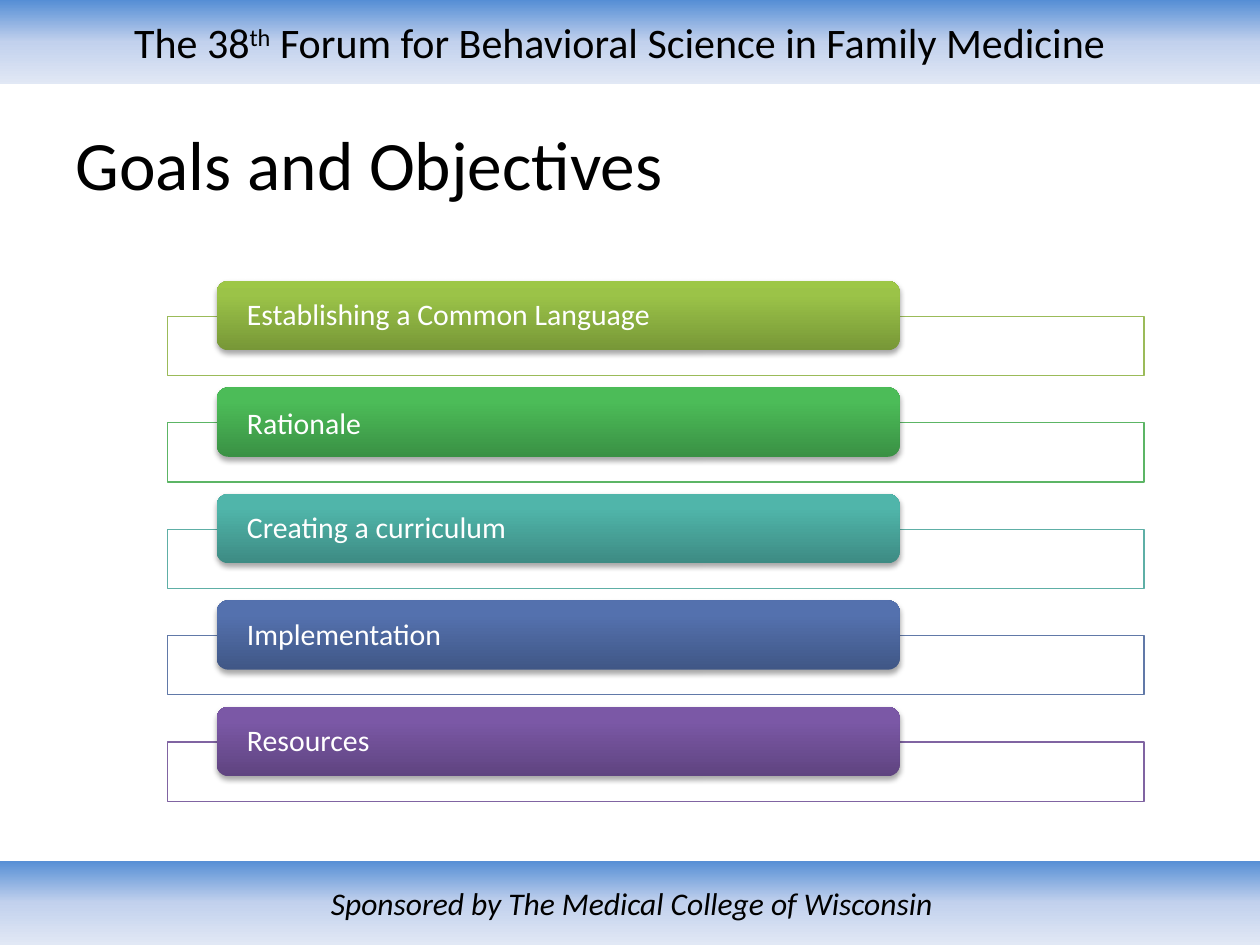
from lxml import etree
from pptx import Presentation
from pptx.dml.color import RGBColor
from pptx.enum.shapes import MSO_SHAPE
from pptx.enum.text import MSO_ANCHOR, MSO_AUTO_SIZE, PP_ALIGN
from pptx.oxml.ns import qn
from pptx.util import Inches, Pt

TITLE = "Goals and Objectives"
BAND_STOPS = [(0, "558ED5"), (50, "C2D1ED"), (100, "E1E8F5")]
BANDS = [
    {"top": 0, "width": 10, "right": 0.26, "size": 24, "italic": False,
     "spans": [("The 38", 0), ("th", 30), (" Forum for Behavioral Science in Family Medicine", 0)]},
    {"top": 6.83, "width": 10.03, "right": 0.1, "size": 18, "italic": True,
     "spans": [("Sponsored by The Medical College of Wisconsin", 0)]},
]
GOALS = [
    ("Establishing a Common Language", 0.9, "9BBB59", ("779737", "9BC348", "9DC746")),
    ("Rationale", 1.0, "5CB565", ("3A9144", "4CBC58", "4ABF57")),
    ("Creating a curriculum", 0.9, "5EAFA6", ("3D8B83", "50B5AA", "4EB8AC")),
    ("Implementation", 0.9, "6179A8", ("405786", "5471AE", "5271B0")),
    ("Resources", 0.9, "8064A2", ("5F4480", "7B58A6", "7C57A8")),
]
FIRST_TOP, LAST_TOP = 2.23, 5.61
PITCH = (LAST_TOP - FIRST_TOP) / (len(GOALS) - 1)


def color(value):
    return RGBColor.from_string(value)


def apply(target, values):
    for name, value in values.items():
        setattr(target, name, value)


def add_element(parent, tag, **attributes):
    return etree.SubElement(parent, qn(tag), {name: str(value) for name, value in attributes.items()})


def write(para, text, size, ink="000000", italic=False, raised=0):
    span = para.add_run()
    span.text = text
    apply(span.font, {"name": "Calibri", "size": Pt(size), "italic": italic})
    span.font.color.rgb = color(ink)
    if raised:
        span._r.get_or_add_rPr().set("baseline", str(raised * 1000))


def add_box(page, kind, left, top, width, height):
    box = page.shapes.add_shape(kind, *map(Inches, (left, top, width, height)))
    box.shadow.inherit = False
    box.line.fill.background()
    return box


def fill_gradient(box, stops, angle):
    box.fill.gradient()
    box.fill.gradient_angle = angle
    stop_list = box._element.spPr.find(".//" + qn("a:gsLst"))
    for stop in list(stop_list):
        stop_list.remove(stop)
    for position, value in stops:
        stop = add_element(stop_list, "a:gs", pos=position * 1000)
        add_element(stop, "a:srgbClr", val=value)


def add_shadow(box):
    effects = box._element.spPr.find(qn("a:effectLst"))
    shadow = add_element(effects, "a:outerShdw", blurRad=Pt(3.1), dist=Pt(1.8),
                         dir=90 * 60000, rotWithShape=0)
    shade = add_element(shadow, "a:srgbClr", val="000000")
    add_element(shade, "a:alpha", val=35000)


def add_band(page, band):
    box = add_box(page, MSO_SHAPE.RECTANGLE, 0, band["top"], band["width"], 0.67)
    fill_gradient(box, BAND_STOPS, 270)
    apply(box.text_frame, {"word_wrap": True, "vertical_anchor": MSO_ANCHOR.MIDDLE,
                           "margin_right": Inches(band["right"])})
    para = box.text_frame.paragraphs[0]
    para.alignment = PP_ALIGN.CENTER
    for text, raised in band["spans"]:
        write(para, text, band["size"], italic=band["italic"], raised=raised)


def add_goal(page, top, text, spacing, outline, shades):
    frame = add_box(page, MSO_SHAPE.RECTANGLE, 1.33, top + 0.28, 7.75, 0.47)
    frame.fill.solid()
    frame.fill.fore_color.rgb = color("FFFFFF")
    add_element(frame._element.spPr.find(".//" + qn("a:srgbClr")), "a:alpha", val=90000)
    frame.line.color.rgb = color(outline)
    frame.line.width = Pt(0.75)

    bar = add_box(page, MSO_SHAPE.ROUNDED_RECTANGLE, 1.72, top, 5.42, 0.55)
    fill_gradient(bar, zip((0, 80, 100), shades), 90)
    add_shadow(bar)

    label = page.shapes.add_textbox(*map(Inches, (1.75, top + 0.03, 5.37, 0.5)))
    apply(label.text_frame, {"word_wrap": True, "vertical_anchor": MSO_ANCHOR.MIDDLE,
                             "margin_left": Inches(0.21), "margin_right": Inches(0.21),
                             "margin_top": 0, "margin_bottom": 0})
    para = label.text_frame.paragraphs[0]
    para.line_spacing = spacing
    write(para, text, 17, "FFFFFF")


def main():
    deck = Presentation()
    apply(deck, {"slide_width": Inches(10), "slide_height": Inches(7.5)})
    page = deck.slides.add_slide(deck.slide_layouts[5])
    for band in BANDS:
        add_band(page, band)

    title = page.shapes.title
    apply(title, {"left": Inches(0.5), "top": Inches(0.92),
                  "width": Inches(9), "height": Inches(0.75)})
    apply(title.text_frame, {"word_wrap": True, "auto_size": MSO_AUTO_SIZE.NONE,
                             "vertical_anchor": MSO_ANCHOR.MIDDLE})
    para = title.text_frame.paragraphs[0]
    para.alignment = PP_ALIGN.LEFT
    write(para, TITLE, 39.6)

    for row, goal in enumerate(GOALS):
        add_goal(page, FIRST_TOP + row * PITCH, *goal)
    deck.save("out.pptx")


if __name__ == "__main__":
    main()
